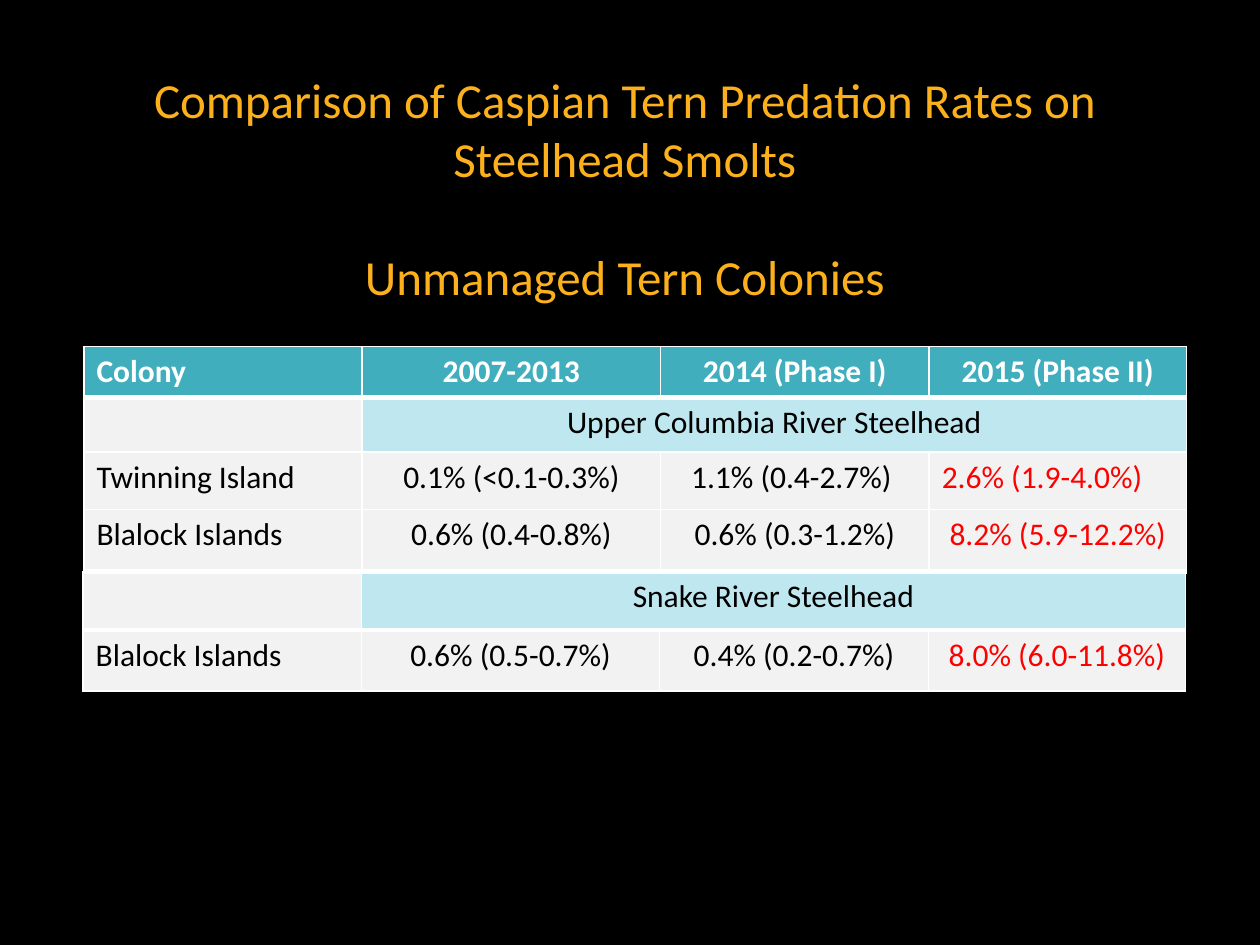
"""Build a slide comparing tern predation rates at unmanaged colonies."""
from dataclasses import dataclass

from lxml import etree
from pptx import Presentation
from pptx.dml.color import RGBColor
from pptx.enum import text
from pptx.oxml import ns
from pptx.util import Pt


@dataclass(frozen=True)
class Theme:
    font: str = "Calibri"
    title_size: int = 28
    table_size: int = 18
    background: str = "000000"
    title: str = "FCB11C"
    header: str = "41AEBD"
    band: str = "BFE7EF"
    body: str = "F2F2F2"
    border: str = "FFFFFF"
    header_text: str = "FFFFFF"
    body_text: str = "000000"
    highlight: str = "FF0000"


theme = Theme()
LEFT, CENTER = text.PP_ALIGN.LEFT, text.PP_ALIGN.CENTER


def style_font(font, size, color, bold=False):
    font.name = theme.font
    font.size = Pt(size)
    font.bold = bold
    font.color.rgb = RGBColor.from_string(color)


def add_border(cell, side, width):
    properties = cell._tc.get_or_add_tcPr()
    line = etree.SubElement(properties, ns.qn(f"a:ln{side}"), w=str(Pt(width)))
    fill = etree.SubElement(line, ns.qn("a:solidFill"))
    etree.SubElement(fill, ns.qn("a:srgbClr"), val=theme.border)


presentation = Presentation()
presentation.slide_width, presentation.slide_height = Pt(720), Pt(540)
slide = presentation.slides.add_slide(presentation.slide_layouts[5])
slide.background.fill.solid()
slide.background.fill.fore_color.rgb = RGBColor.from_string(theme.background)

title = slide.shapes.title
title.left, title.top, title.width, title.height = Pt(36), Pt(36), Pt(642), Pt(78)
title_frame = title.text_frame
title_frame.text = (
    "Comparison of Caspian Tern Predation Rates on Steelhead Smolts\n"
    "Unmanaged Tern Colonies"
)
title_frame.word_wrap = True
title_frame.auto_size = text.MSO_AUTO_SIZE.NONE
title_frame.vertical_anchor = text.MSO_ANCHOR.TOP
for paragraph in title_frame.paragraphs:
    paragraph.alignment = CENTER
    style_font(paragraph.runs[0].font, theme.title_size, theme.title)
title_frame.paragraphs[1].space_before = Pt(34)

column_widths = [159, 170.5, 153.5, 147]
tables = [
    (48, 198, [28, 31, 34.5], 0, [
        ["Colony", "2007-2013", "2014 (Phase I)", "2015 (Phase II)"],
        ["", "Upper Columbia River Steelhead"],
        ["Twinning Island", "0.1% (<0.1-0.3%)", "1.1% (0.4-2.7%) ", "2.6% (1.9-4.0%)"],
    ]),
    (47.5, 326.5, [33.5, 35], 0, [
        ["", "Snake River Steelhead"],
        ["Blalock Islands", "0.6% (0.5-0.7%)", "0.4% (0.2-0.7%)", "8.0% (6.0-11.8%)"],
    ]),
    (48, 291, [35.5], 0, [
        ["Blalock Islands", "0.6% (0.4-0.8%)", "0.6% (0.3-1.2%)", "8.2% (5.9-12.2%)"],
    ]),
]
left_aligned = {"Colony", "Twinning Island", "Blalock Islands", "2.6% (1.9-4.0%)"}

for left, top, row_heights, thick_row, rows in tables:
    table = slide.shapes.add_table(
        len(rows), len(column_widths), Pt(left), Pt(top),
        Pt(sum(column_widths)), Pt(sum(row_heights)),
    ).table
    for column, width in zip(table.columns, column_widths):
        column.width = Pt(width)
    for row_index, values in enumerate(rows):
        table.rows[row_index].height = Pt(row_heights[row_index])
        is_header = values[0] == "Colony"
        is_band = len(values) == 2
        if is_band:
            table.cell(row_index, 1).merge(table.cell(row_index, 3))
        for column_index in range(len(column_widths)):
            cell = table.cell(row_index, column_index)
            add_border(cell, "L", 1)
            add_border(cell, "R", 1)
            add_border(cell, "T", 3 if row_index == thick_row + 1 else 1)
            add_border(cell, "B", 3 if row_index == thick_row else 1)
            fill_color, text_color = theme.body, theme.body_text
            if is_header:
                fill_color, text_color = theme.header, theme.header_text
            elif is_band and column_index > 0:
                fill_color = theme.band
            elif column_index == 3:
                text_color = theme.highlight
            cell.fill.solid()
            cell.fill.fore_color.rgb = RGBColor.from_string(fill_color)
            if column_index < len(values) and values[column_index]:
                value = values[column_index]
                cell.text_frame.text = value
                paragraph = cell.text_frame.paragraphs[0]
                paragraph.alignment = LEFT if value in left_aligned else CENTER
                style_font(paragraph.runs[0].font, theme.table_size, text_color, is_header)

presentation.save("out.pptx")
